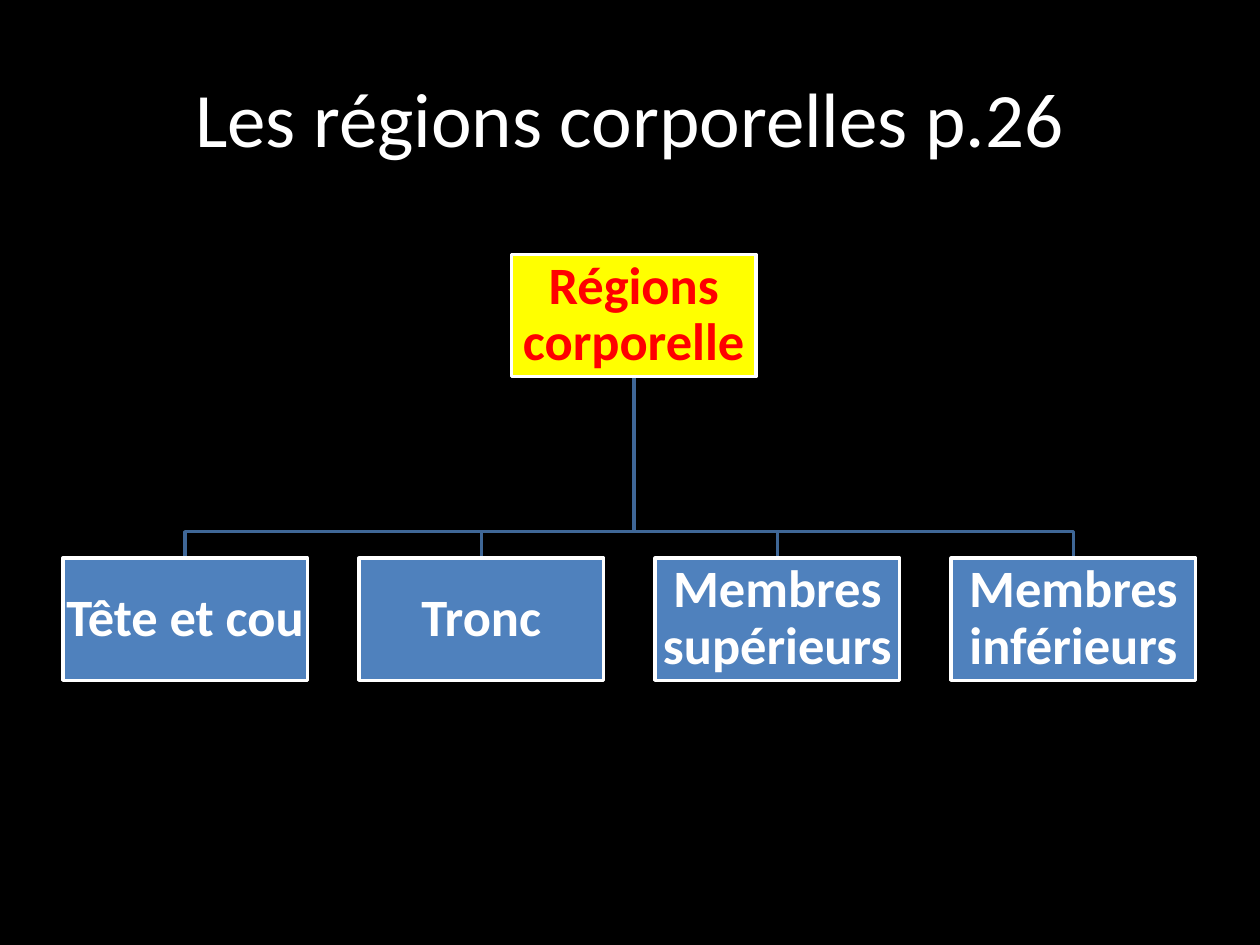
from pptx import Presentation
from pptx.dml.color import RGBColor
from pptx.enum.shapes import MSO_SHAPE
from pptx.enum.text import MSO_ANCHOR, PP_ALIGN
from pptx.util import Inches, Pt

COLORS = {
    "background": "000000",
    "white": "FFFFFF",
    "root": "FFFF00",
    "root_text": "FF0000",
    "region": "4F81BD",
    "branch": "3F6797",
}
FONT = "Calibri"
BOX_WIDTH, BOX_HEIGHT = 1.94, 0.97
ROOT_LEFT, ROOT_TOP = 4.06, 2.02
REGION_LEFT, REGION_TOP, REGION_STEP = 0.5, 4.43, 2.35
BRANCH_Y = 4.22
REGIONS = ["Tête et cou", "Tronc", "Membres supérieurs", "Membres inférieurs"]


def color(name):
    """Return the named palette colour."""
    return RGBColor.from_string(COLORS[name])


def write(frame, text, size, color_name, bold=False):
    """Write one centred run into a text frame and return its paragraph."""
    frame.word_wrap = True
    frame.vertical_anchor = MSO_ANCHOR.MIDDLE
    paragraph = frame.paragraphs[0]
    paragraph.alignment = PP_ALIGN.CENTER
    run = paragraph.add_run()
    run.text = text
    run.font.name = FONT
    run.font.size = Pt(size)
    run.font.bold = bold
    run.font.color.rgb = color(color_name)
    return paragraph


def add_title(slide, text):
    """Place and fill the title placeholder."""
    title = slide.shapes.title
    title.left, title.top = Inches(0.5), Inches(0.3)
    title.width, title.height = Inches(9), Inches(1.25)
    write(title.text_frame, text, 44, "white")


def add_branch(slide, region_left):
    """Draw the elbow line from the root box down to a region box."""
    root_x = Inches(ROOT_LEFT + BOX_WIDTH / 2)
    region_x = Inches(region_left + BOX_WIDTH / 2)
    bend_y = Inches(BRANCH_Y)
    builder = slide.shapes.build_freeform(root_x, Inches(ROOT_TOP + BOX_HEIGHT))
    builder.add_line_segments(
        [(root_x, bend_y), (region_x, bend_y), (region_x, Inches(REGION_TOP))],
        close=False,
    )
    branch = builder.convert_to_shape()
    branch.shadow.inherit = False
    branch.fill.background()
    branch.line.color.rgb = color("branch")
    branch.line.width = Pt(2)


def add_box(slide, left, top, text, fill, text_color):
    """Add one labelled box of the hierarchy."""
    box = slide.shapes.add_shape(
        MSO_SHAPE.RECTANGLE,
        Inches(left), Inches(top), Inches(BOX_WIDTH), Inches(BOX_HEIGHT),
    )
    box.shadow.inherit = False
    box.fill.solid()
    box.fill.fore_color.rgb = color(fill)
    box.line.color.rgb = color("white")
    box.line.width = Pt(2)
    frame = box.text_frame
    frame.margin_left = frame.margin_right = Inches(0.02)
    frame.margin_top = frame.margin_bottom = Inches(0.02)
    write(frame, text, 30, text_color, bold=True).line_spacing = 0.9


def main():
    """Build the slide of body regions."""
    deck = Presentation()
    deck.slide_width, deck.slide_height = Inches(10), Inches(7.5)
    slide = deck.slides.add_slide(deck.slide_layouts[5])
    slide.background.fill.solid()
    slide.background.fill.fore_color.rgb = color("background")

    add_title(slide, "Les régions corporelles p.26")
    region_lefts = [REGION_LEFT + i * REGION_STEP for i in range(len(REGIONS))]
    for left in reversed(region_lefts):
        add_branch(slide, left)
    add_box(slide, ROOT_LEFT, ROOT_TOP, "Régions corporelle", "root", "root_text")
    for left, region in zip(region_lefts, REGIONS):
        add_box(slide, left, REGION_TOP, region, "region", "white")

    deck.save("out.pptx")


if __name__ == "__main__":
    main()
